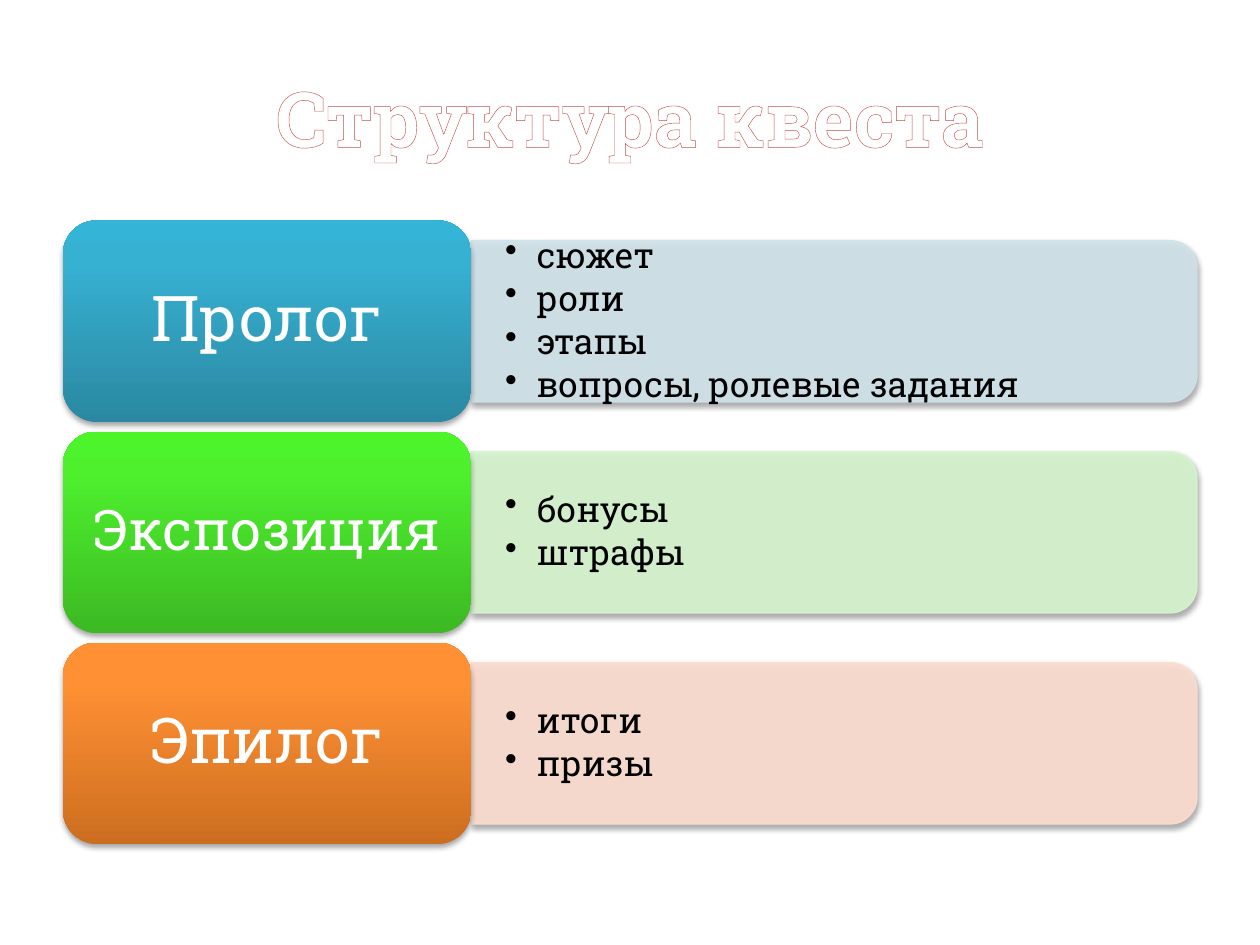
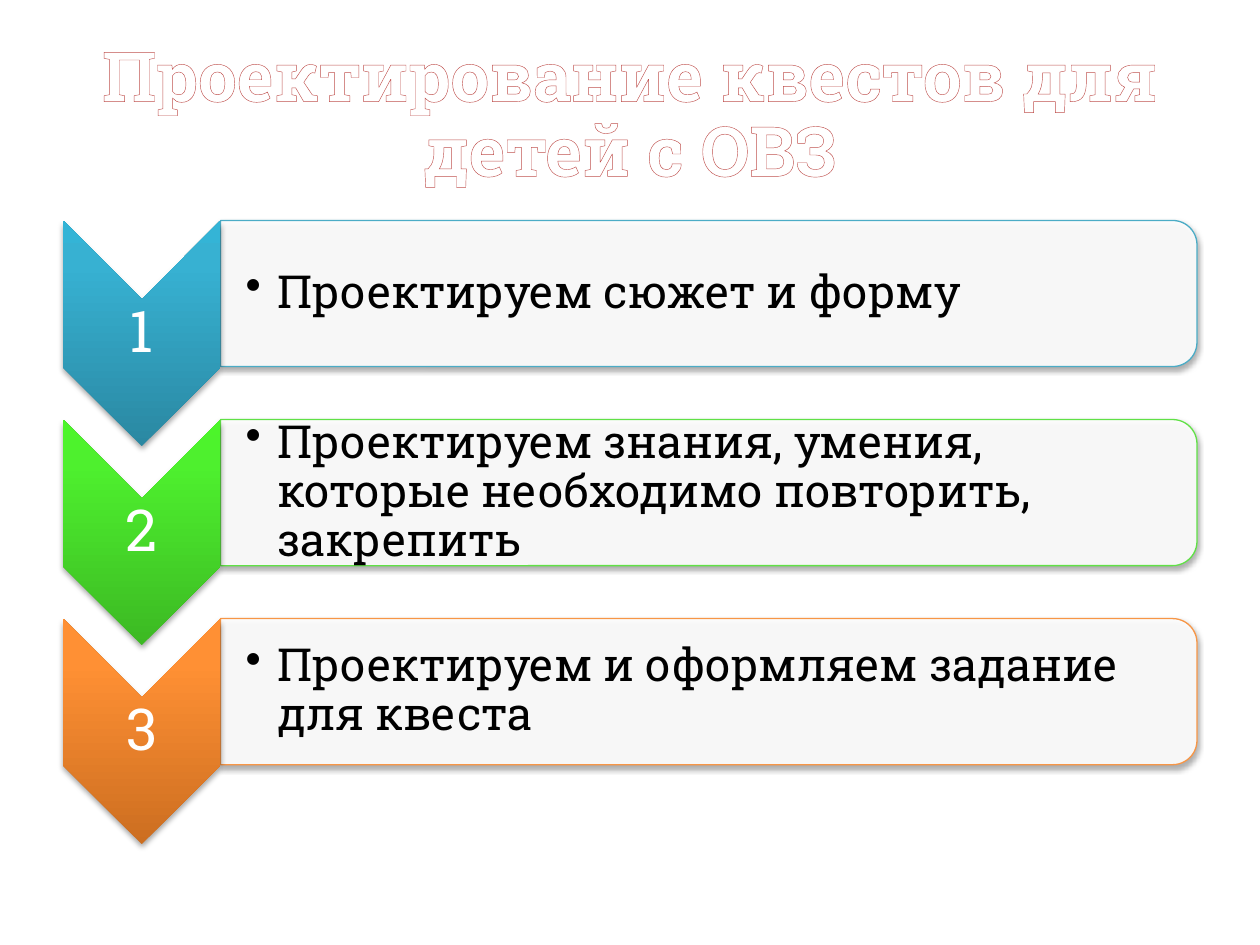
"""Build two slides on quest design: the quest structure and the design steps."""
from dataclasses import dataclass
from typing import Any, Optional

import pptx
import pptx.dml.color
import pptx.enum.shapes
import pptx.enum.text
import pptx.oxml
import pptx.oxml.ns
import pptx.util
from pptx.util import Inches

RGBColor = pptx.dml.color.RGBColor
Shape = pptx.enum.shapes.MSO_SHAPE
ALIGN = pptx.enum.text.PP_ALIGN
MIDDLE = pptx.enum.text.MSO_ANCHOR.MIDDLE

FONT = "Roboto Slab"
WHITE = RGBColor(0xFF, 0xFF, 0xFF)
BLACK = RGBColor(0x00, 0x00, 0x00)
TITLE_OUTLINE = RGBColor(0xC0, 0x50, 0x4D)
XMLNS = pptx.oxml.ns.nsdecls("a")
LEFT, TOP, RIGHT = 0.5, 1.75, 9.5
BULLET = '<a:buChar {} char="•"/>'


@dataclass(frozen=True)
class Theme:
    """Colours of one row: gradient from bottom to top, pale fill, and border."""
    dark: RGBColor
    bright: RGBColor
    top: RGBColor
    pale: RGBColor
    border: RGBColor


@dataclass(frozen=True)
class Box:
    """A rectangle in inches, as seen on the slide."""
    left: float
    top: float
    width: float
    height: float


@dataclass(frozen=True)
class TextStyle:
    """How the text of a box is set."""
    size: float
    color: RGBColor
    inset_x: float = 0.1
    inset_y: float = 0.05
    align: Optional[Any] = None
    line_spacing: float = 0.9
    after_percent: int = 0
    bullet: bool = False
    bold: bool = False


@dataclass(frozen=True)
class Row:
    """A label with its points."""
    label: str
    points: tuple[str, ...]
    label_size: float


@dataclass(frozen=True)
class RowLayout:
    """Measures of a slide's rows: marker, label text and panel."""
    marker: Any
    quarter_turns: int
    pitch: float
    marker_width: float
    marker_height: float
    label_inset: Box
    label_padding: tuple[float, float]
    panel_offset: float
    panel_height: float
    panel_padding: tuple[float, float]
    point_size: float
    pale_panels: bool


BLUE = Theme(RGBColor(0x2A, 0x88, 0xA2), RGBColor(0x37, 0xB1, 0xD2), RGBColor(0x34, 0xB4, 0xD6),
             RGBColor(0xD0, 0xE3, 0xEA), RGBColor(0x4B, 0xAC, 0xC6))
GREEN = Theme(RGBColor(0x3C, 0xB9, 0x23), RGBColor(0x4E, 0xF0, 0x2E), RGBColor(0x4C, 0xF5, 0x2A),
              RGBColor(0xD6, 0xF4, 0xCE), RGBColor(0x60, 0xE1, 0x46))
ORANGE = Theme(RGBColor(0xCC, 0x6E, 0x20), RGBColor(0xFF, 0x90, 0x34), RGBColor(0xFF, 0x91, 0x36),
               RGBColor(0xFC, 0xDD, 0xCF), RGBColor(0xF7, 0x96, 0x46))
THEMES = (BLUE, GREEN, ORANGE)

STRUCTURE_LAYOUT = RowLayout(
    Shape.ROUNDED_RECTANGLE, 0, 1.675, 3.24, 1.6, Box(0.08, 0.08, 3.08, 1.44),
    (0.13, 0.07), 0.16, 1.28, (0.27, 0.14), 20, True)
STEPS_LAYOUT = RowLayout(
    Shape.CHEVRON, 1, 1.58, 1.25, 1.79, Box(0, 0.63, 1.25, 0.54),
    (0.02, 0.02), 0, 1.16, (0.2, 0.02), 26, False)

STRUCTURE_ROWS = (
    Row("Пролог", ("сюжет", "роли", "этапы", "вопросы, ролевые задания"), 36),
    Row("Экспозиция", ("бонусы", "штрафы"), 32),
    Row("Эпилог", ("итоги", "призы"), 36),
)
STEP_ROWS = (
    Row("1", ("Проектируем сюжет и форму",), 33),
    Row("2", ("Проектируем знания, умения, которые необходимо повторить, закрепить",), 33),
    Row("3", ("Проектируем и оформляем задание для квеста",), 33),
)


def apply_format(target: Any, values: dict[str, Any]) -> None:
    """Set each named attribute of the target."""
    for name, value in values.items():
        setattr(target, name, value)


def element(xml: str) -> Any:
    """Parse a drawing element whose braces stand for the namespace."""
    return pptx.oxml.parse_xml(xml.replace("{}", XMLNS))


def add_text(slide: Any, box: Box, lines: tuple[str, ...], style: TextStyle) -> Any:
    """Add a middle-anchored text box and return its text frame."""
    frame = slide.shapes.add_textbox(
        Inches(box.left), Inches(box.top), Inches(box.width), Inches(box.height)).text_frame
    apply_format(frame, {
        "word_wrap": True, "vertical_anchor": MIDDLE,
        "margin_left": Inches(style.inset_x), "margin_right": Inches(style.inset_x),
        "margin_top": Inches(style.inset_y), "margin_bottom": Inches(style.inset_y)})
    for index, line in enumerate(lines):
        paragraph = frame.add_paragraph() if index else frame.paragraphs[0]
        properties = paragraph._p.get_or_add_pPr()
        if style.after_percent:
            properties.append(element(
                f'<a:spcAft {{}}><a:spcPct val="{style.after_percent * 1000}"/></a:spcAft>'))
        if style.bullet:
            properties.append(element(BULLET))
            properties.set("marL", str(Inches(0.25)))
            properties.set("indent", str(Inches(-0.25)))
        apply_format(paragraph, {
            "alignment": style.align, "line_spacing": style.line_spacing,
            "level": int(style.bullet)})
        run = paragraph.add_run()
        run.text = line
        apply_format(run.font, {
            "name": FONT, "size": pptx.util.Pt(style.size), "bold": style.bold})
        run.font.color.rgb = style.color
    return frame


def add_title(slide: Any, text: str, size: float, line_spacing: float) -> None:
    """Add the outlined white title."""
    style = TextStyle(size, WHITE, align=ALIGN.CENTER, line_spacing=line_spacing, bold=True)
    frame = add_text(slide, Box(LEFT, 0.3, RIGHT - LEFT, 1.25), (text,), style)
    outline = element(f'<a:ln {{}} w="6600"><a:solidFill><a:srgbClr val="{TITLE_OUTLINE}"/>'
                      '</a:solidFill></a:ln>')
    frame.paragraphs[0].runs[0].font._element.insert(0, outline)


def add_turned_shape(slide: Any, kind: Any, box: Box, quarter_turns: int) -> Any:
    """Add a shape that fills the box after its quarter turns."""
    width, height = (box.height, box.width) if quarter_turns else (box.width, box.height)
    shape = slide.shapes.add_shape(
        kind, Inches(box.left + (box.width - width) / 2),
        Inches(box.top + (box.height - height) / 2), Inches(width), Inches(height))
    shape.rotation = 90 * quarter_turns
    return shape


def add_shadow(shape: Any) -> None:
    """Give the shape a soft shadow straight below."""
    shape.shadow.inherit = False
    effects = shape._element.spPr.find(pptx.oxml.ns.qn("a:effectLst"))
    effects.append(element(
        '<a:outerShdw {} blurRad="40000" dist="23000" dir="5400000" rotWithShape="0">'
        '<a:srgbClr val="000000"><a:alpha val="35000"/></a:srgbClr></a:outerShdw>'))


def add_marker(slide: Any, layout: RowLayout, box: Box, theme: Theme) -> None:
    """Add the gradient shape behind a label."""
    marker = add_turned_shape(slide, layout.marker, box, layout.quarter_turns)
    marker.fill.background()
    marker.line.fill.background()
    properties = marker._element.spPr
    stops = "".join(
        f'<a:gs pos="{percent * 1000}"><a:srgbClr val="{color}"/></a:gs>'
        for percent, color in ((0, theme.dark), (80, theme.bright), (100, theme.top)))
    properties.replace(properties.find(pptx.oxml.ns.qn("a:noFill")), element(
        f'<a:gradFill {{}} rotWithShape="0"><a:gsLst>{stops}</a:gsLst>'
        '<a:lin ang="16200000" scaled="0"/></a:gradFill>'))
    add_shadow(marker)


def add_panel(slide: Any, box: Box, fill: RGBColor, border: RGBColor, clear_border: bool) -> None:
    """Add the translucent panel rounded on its right side."""
    panel = add_turned_shape(slide, Shape.ROUND_2_SAME_RECTANGLE, box, 1)
    panel.fill.solid()
    panel.line.width = pptx.util.Pt(0.75)
    panel.fill.fore_color.rgb = fill
    panel.line.color.rgb = border
    properties = panel._element.spPr
    colors = list(properties.iter(pptx.oxml.ns.qn("a:srgbClr")))
    for color in colors if clear_border else colors[:1]:
        color.append(element('<a:alpha {} val="90000"/>'))
    add_shadow(panel)


def add_row(slide: Any, layout: RowLayout, row: Row, theme: Theme, top: float) -> None:
    """Add a panel with its points, then the marker with its label."""
    panel_left = LEFT + layout.marker_width
    panel = Box(panel_left, top + layout.panel_offset, RIGHT - panel_left, layout.panel_height)
    fill, border = (theme.pale, theme.pale) if layout.pale_panels else (WHITE, theme.border)
    add_panel(slide, panel, fill, border, layout.pale_panels)
    add_text(slide, Box(panel.left, panel.top + 0.06, panel.width - 0.06, panel.height - 0.12),
             row.points, TextStyle(layout.point_size, BLACK, *layout.panel_padding,
                                   after_percent=15, bullet=True))
    add_marker(slide, layout, Box(LEFT, top, layout.marker_width, layout.marker_height), theme)
    inset = layout.label_inset
    add_text(slide, Box(LEFT + inset.left, top + inset.top, inset.width, inset.height),
             (row.label,), TextStyle(row.label_size, WHITE, *layout.label_padding,
                                     align=ALIGN.CENTER, after_percent=35))


def add_rows(slide: Any, layout: RowLayout, rows: tuple[Row, ...]) -> None:
    """Stack the rows at the pitch of the layout."""
    for index, (row, theme) in enumerate(zip(rows, THEMES)):
        add_row(slide, layout, row, theme, TOP + index * layout.pitch)


def main() -> None:
    """Build and save the presentation."""
    deck = pptx.Presentation()
    apply_format(deck, {"slide_width": Inches(10), "slide_height": Inches(7.5)})
    blank = deck.slide_layouts[6]

    structure = deck.slides.add_slide(blank)
    add_title(structure, "Структура квеста", 44, 1.0)
    add_rows(structure, STRUCTURE_LAYOUT, STRUCTURE_ROWS)

    steps = deck.slides.add_slide(blank)
    add_title(steps, "Проектирование квестов для детей с ОВЗ", 39.6, 0.9)
    add_rows(steps, STEPS_LAYOUT, STEP_ROWS)

    deck.save("out.pptx")


if __name__ == "__main__":
    main()
